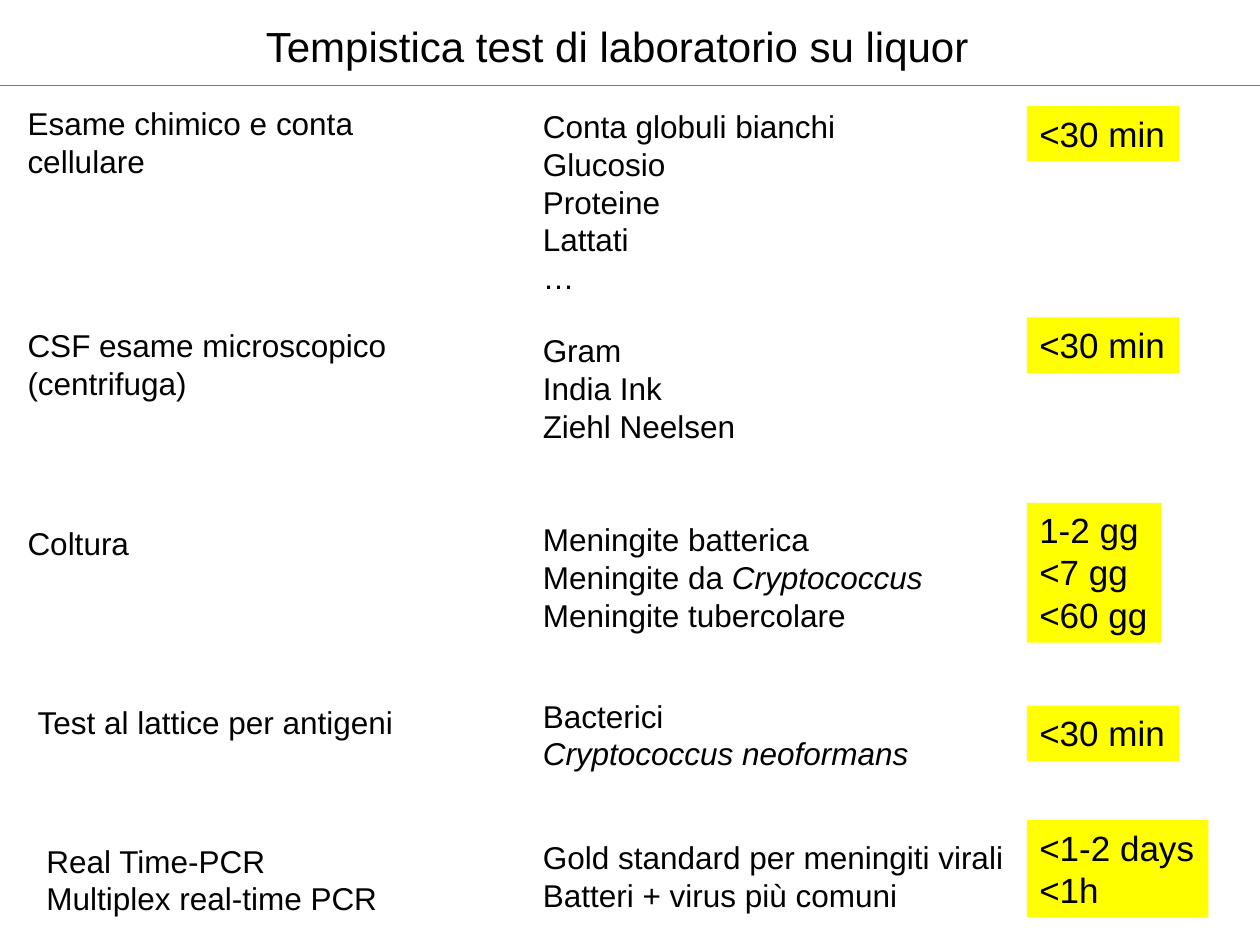
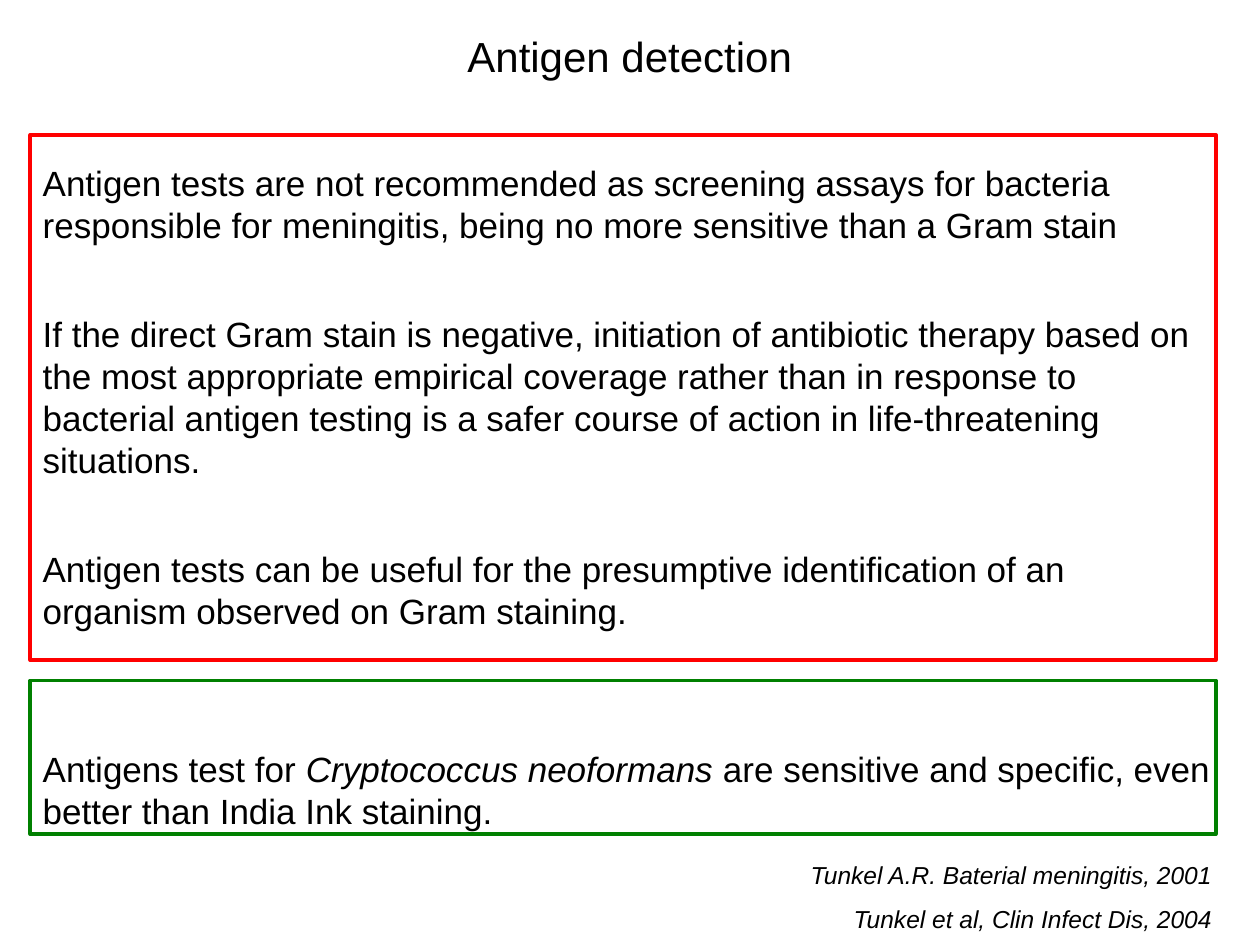
from lxml import etree
from pptx import Presentation
from pptx.dml.color import RGBColor
from pptx.enum import shapes, text
from pptx.oxml.ns import qn
from pptx.util import Inches, Pt

COLORS = {
    "text": "000000",
    "rule": "4B7EBC",
    "time": "FFFF00",
    "caution": "FF0000",
    "useful": "008000",
    "paper": "FFFFFF",
}
COLORS = {name: RGBColor.from_string(value) for name, value in COLORS.items()}
FONT = "Arial"


def write(sp, lines, size, wrap=True, align=text.PP_ALIGN.LEFT):
    """Fill a shape with paragraphs; parts between asterisks are italic."""
    tf = sp.text_frame
    tf.word_wrap = wrap
    tf.vertical_anchor = text.MSO_ANCHOR.TOP
    tf.auto_size = text.MSO_AUTO_SIZE.NONE
    for i, line in enumerate(lines):
        p = tf.paragraphs[0] if i == 0 else tf.add_paragraph()
        p.alignment = align
        for j, part in enumerate(line.split("*")):
            if not part:
                continue
            r = p.add_run()
            r.text = part
            r.font.name = FONT
            r.font.size = Pt(size)
            r.font.italic = j % 2 == 1
            r.font.color.rgb = COLORS["text"]


def add_box(s, at, fill=None, line=None, width=2):
    sp = s.shapes.add_shape(shapes.MSO_SHAPE.RECTANGLE, *map(Inches, at))
    sp.shadow.inherit = False
    if fill:
        sp.fill.solid()
        sp.fill.fore_color.rgb = COLORS[fill]
    else:
        sp.fill.background()
    if line:
        sp.line.color.rgb = COLORS[line]
        sp.line.width = Pt(width)
    else:
        sp.line.fill.background()
    return sp


prs = Presentation()
prs.slide_width = Inches(10)
prs.slide_height = Inches(7.5)

# Titles
titles = [
    ("Tempistica test di laboratorio su liquor", (2.01, 0.11, 5.84, 0.5)),
    ("Antigen detection", (3.61, 0.19, 2.81, 0.5)),
]
for title, at in titles:
    s = prs.slides.add_slide(prs.slide_layouts[5])
    sp = s.shapes.title
    sp.left, sp.top, sp.width, sp.height = map(Inches, at)
    write(sp, [title], 24, wrap=False)
timing, antigen = prs.slides

# Timing of the tests: test, what it looks for, time to result
rule = timing.shapes.add_connector(
    shapes.MSO_CONNECTOR.STRAIGHT, 0, Inches(0.68), prs.slide_width, Inches(0.68))
rule.line.color.rgb = COLORS["rule"]
rule.line.width = Pt(0.75)
etree.SubElement(rule._element.spPr, qn("a:effectLst"))

tests = [
    ((0.12, 0.78, 2.95), ["Esame chimico e conta cellulare"]),
    ((0.12, 2.54, 3.08), ["CSF esame microscopico", "(centrifuga)"]),
    ((0.12, 4.11, 1.02), ["Coltura"]),
    ((0.2, 5.53, 3.05), ["Test al lattice per antigeni"]),
    ((0.27, 6.63, 2.85), ["Real Time-PCR", "Multiplex real-time PCR"]),
]
targets = [
    ((4.21, 0.8, 2.61),
     ["Conta globuli bianchi", "Glucosio", "Proteine", "Lattati", "…"]),
    ((4.21, 2.58, 1.74), ["Gram", "India Ink", "Ziehl Neelsen"]),
    ((4.21, 4.08, 3.32),
     ["Meningite batterica", "Meningite da *Cryptococcus*", "Meningite tubercolare"]),
    ((4.21, 5.48, 3.13), ["Bacterici", "*Cryptococcus neoformans*"]),
    ((4.21, 6.6, 3.89),
     ["Gold standard per meningiti virali", "Batteri + virus più comuni"]),
]
for (left, top, width), lines in tests + targets:
    wraps = lines == tests[0][1]
    line_count = 2 if wraps else len(lines)
    height = round(0.1 + 0.3 * line_count, 2)
    sp = timing.shapes.add_textbox(*map(Inches, (left, top, width, height)))
    write(sp, lines, 18, wrap=wraps)

times = [
    (0.84, 1.21, ["<30 min"]),
    (2.52, 1.21, ["<30 min"]),
    (3.99, 1.07, ["1-2 gg", "<7 gg", "<60 gg"]),
    (5.6, 1.21, ["<30 min"]),
    (6.51, 1.44, ["<1-2 days", "<1h"]),
]
for top, width, lines in times:
    height = round(0.1 + 0.335 * len(lines), 2)
    sp = add_box(timing, (8.15, top, width, height), fill="time")
    write(sp, lines, 20, wrap=False)

# Antigen detection: framed statements and sources
statements = [
    ((0.24, 1.23, 9.41, 0.77),
     "Antigen tests are not recommended as screening assays for bacteria "
     "responsible for meningitis, being no more sensitive than a Gram stain"),
    ((0.24, 2.43, 9.41, 1.45),
     "If the direct Gram stain is negative, initiation of antibiotic therapy "
     "based on the most appropriate empirical coverage rather than in response "
     "to bacterial antigen testing is a safer course of action in "
     "life-threatening situations."),
    ((0.24, 4.3, 8.93, 0.77),
     "Antigen tests can be useful for the presumptive identification of an "
     "organism observed on Gram staining."),
    ((0.24, 5.88, 9.69, 0.77),
     "Antigens test for *Cryptococcus neoformans *are sensitive and specific, "
     "even better than India Ink staining."),
]
for at, statement in statements:
    sp = antigen.shapes.add_textbox(*map(Inches, at))
    write(sp, [statement], 20)

add_box(antigen, (0.24, 1.07, 9.41, 4.17), line="caution")
add_box(antigen, (0.24, 5.4, 9.41, 1.22), line="useful")

sources = add_box(antigen, (4.76, 6.66, 4.96, 0.81), "paper", "paper", 0.75)
write(sources,
      ["*Tunkel A.R. Baterial meningitis, 2001*", "*Tunkel et al, Clin Infect Dis, 2004*"],
      14, align=text.PP_ALIGN.RIGHT)
for p in sources.text_frame.paragraphs:
    p.line_spacing = 1.5

prs.save("out.pptx")
